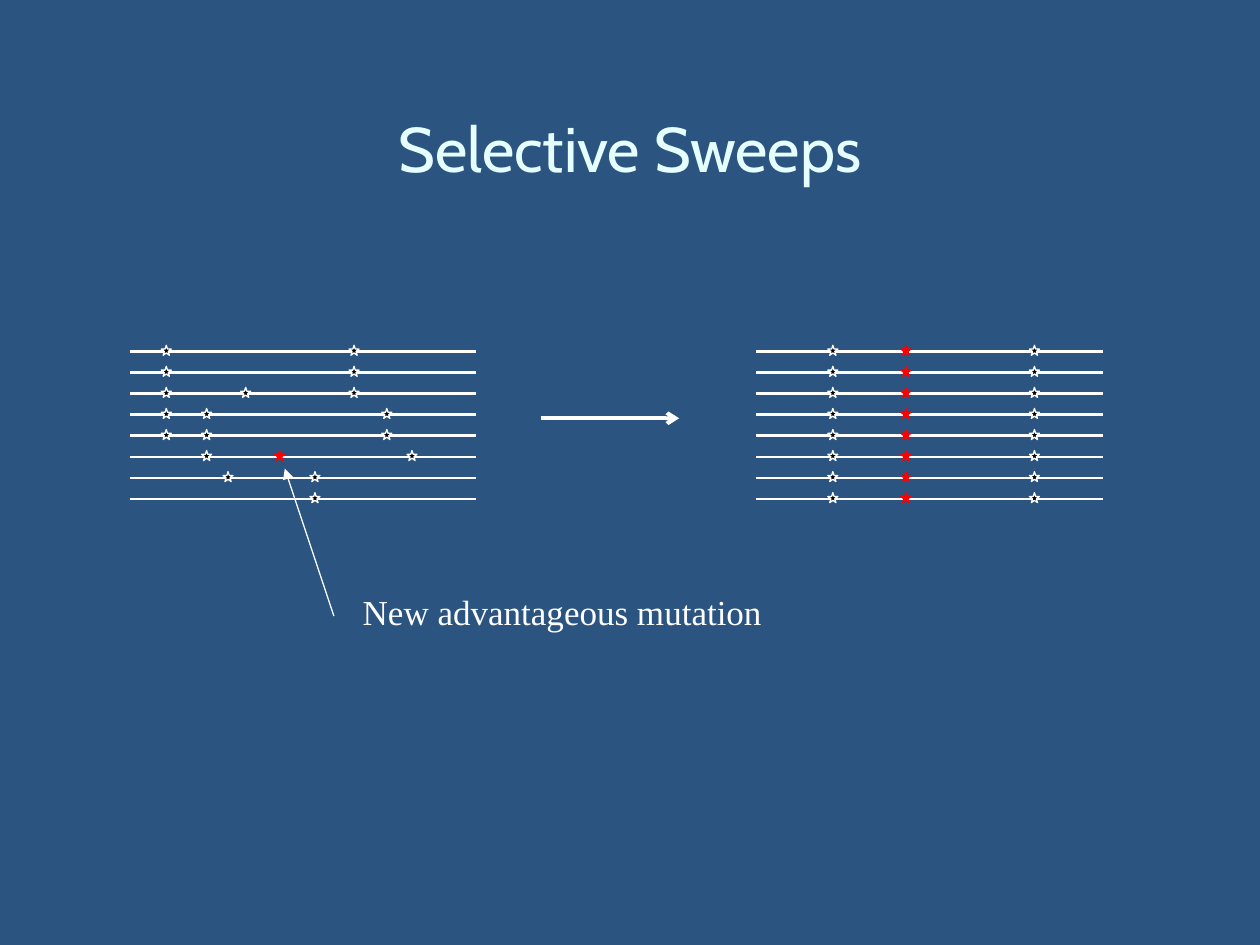
from lxml import etree
from pptx import Presentation
from pptx import util as u
from pptx.dml import color as c
from pptx.enum import shapes, text
from pptx.oxml import ns

BLUE = c.RGBColor(0x2B, 0x54, 0x81)
ICE = c.RGBColor(0xE5, 0xFF, 0xFF)
WHITE = c.RGBColor(0xFF, 0xFF, 0xFF)
BLACK = c.RGBColor(0, 0, 0)
RED = c.RGBColor(0xFF, 0, 0)

ROWS = 8
TOP = 2.79
ROW_GAP = 1.17 / (ROWS - 1)
STRAND_LENGTH = 2.75
STAR_SIZE = 0.08

BEFORE_SITES = {
    1.28: range(0, 5),
    1.6: range(3, 6),
    1.91: [2],
    1.77: [6],
    2.46: [6, 7],
    2.77: range(0, 3),
    3.03: [3, 4],
    3.23: [5],
}
AFTER_SITES = {6.57: range(ROWS), 8.17: range(ROWS)}


class Deck:
    title_format = {"size": u.Pt(36), "name": "Cabin"}
    label_format = {"size": u.Pt(20), "name": "Times New Roman"}

    def __init__(self, prs):
        self.slide = prs.slides.add_slide(prs.slide_layouts[5])
        fill = self.slide.background.fill
        fill.solid()
        fill.fore_color.rgb = BLUE

    def set_text(self, s, words, format_values, color, align, anchor):
        tf = s.text_frame
        tf.word_wrap = True
        tf.vertical_anchor = anchor
        p = tf.paragraphs[0]
        p.alignment = align
        r = p.add_run()
        r.text = words
        for key, value in format_values.items():
            setattr(r.font, key, value)
        r.font.color.rgb = color
        return tf

    def title(self, words, box):
        s = self.slide.shapes.title
        s.left, s.top, s.width, s.height = [u.Inches(v) for v in box]
        self.set_text(s, words, self.title_format, ICE,
                      text.PP_ALIGN.CENTER, text.MSO_ANCHOR.MIDDLE)

    def label(self, words, box):
        s = self.slide.shapes.add_textbox(*[u.Inches(v) for v in box])
        tf = self.set_text(s, words, self.label_format, WHITE,
                           text.PP_ALIGN.LEFT, text.MSO_ANCHOR.TOP)
        tf.auto_size = text.MSO_AUTO_SIZE.SHAPE_TO_FIT_TEXT

    def line(self, parent, start, end, width, head=None):
        s = parent.shapes.add_connector(
            shapes.MSO_CONNECTOR.STRAIGHT, *[u.Inches(v) for v in start + end])
        s.line.color.rgb = WHITE
        s.line.width = u.Pt(width)
        sp = s.element.spPr
        if head:
            etree.SubElement(sp.find(ns.qn("a:ln")), ns.qn("a:tailEnd"), type=head)
        etree.SubElement(sp, ns.qn("a:effectLst"))

    def star(self, parent, left, row, fill, outline):
        top = TOP + row * ROW_GAP - 0.05
        s = parent.shapes.add_shape(
            shapes.MSO_SHAPE.STAR_5_POINT,
            *[u.Inches(v) for v in (left, top, STAR_SIZE, STAR_SIZE)])
        s.shadow.inherit = False
        s.fill.solid()
        s.fill.fore_color.rgb = fill
        s.line.color.rgb = outline
        s.line.width = u.Pt(0.75)

    def population(self, left, neutral_sites, sweep_left, sweep_rows):
        group = self.slide.shapes.add_group_shape()
        for row in range(ROWS):
            y = TOP + row * ROW_GAP
            self.line(group, (left, y), (left + STRAND_LENGTH, y), 1.5)
        for site, rows in neutral_sites.items():
            for row in rows:
                self.star(group, site, row, BLACK, WHITE)
        for row in sweep_rows:
            self.star(group, sweep_left, row, RED, RED)


def main():
    prs = Presentation()
    prs.slide_width = u.Inches(10)
    prs.slide_height = u.Inches(7.5)
    deck = Deck(prs)
    deck.title("Selective Sweeps", (0.5, 0.42, 9, 1.5))
    deck.population(1.03, BEFORE_SITES, 2.18, [5])
    deck.line(deck.slide, (4.29, 3.32), (5.39, 3.32), 2.25, "arrow")
    deck.line(deck.slide, (2.65, 4.89), (2.26, 3.72), 0.75, "triangle")
    deck.label("New advantageous mutation", (2.78, 4.64, 4.12, 0.43))
    deck.population(6, AFTER_SITES, 7.15, range(ROWS))
    prs.save("out.pptx")


if __name__ == "__main__":
    main()
